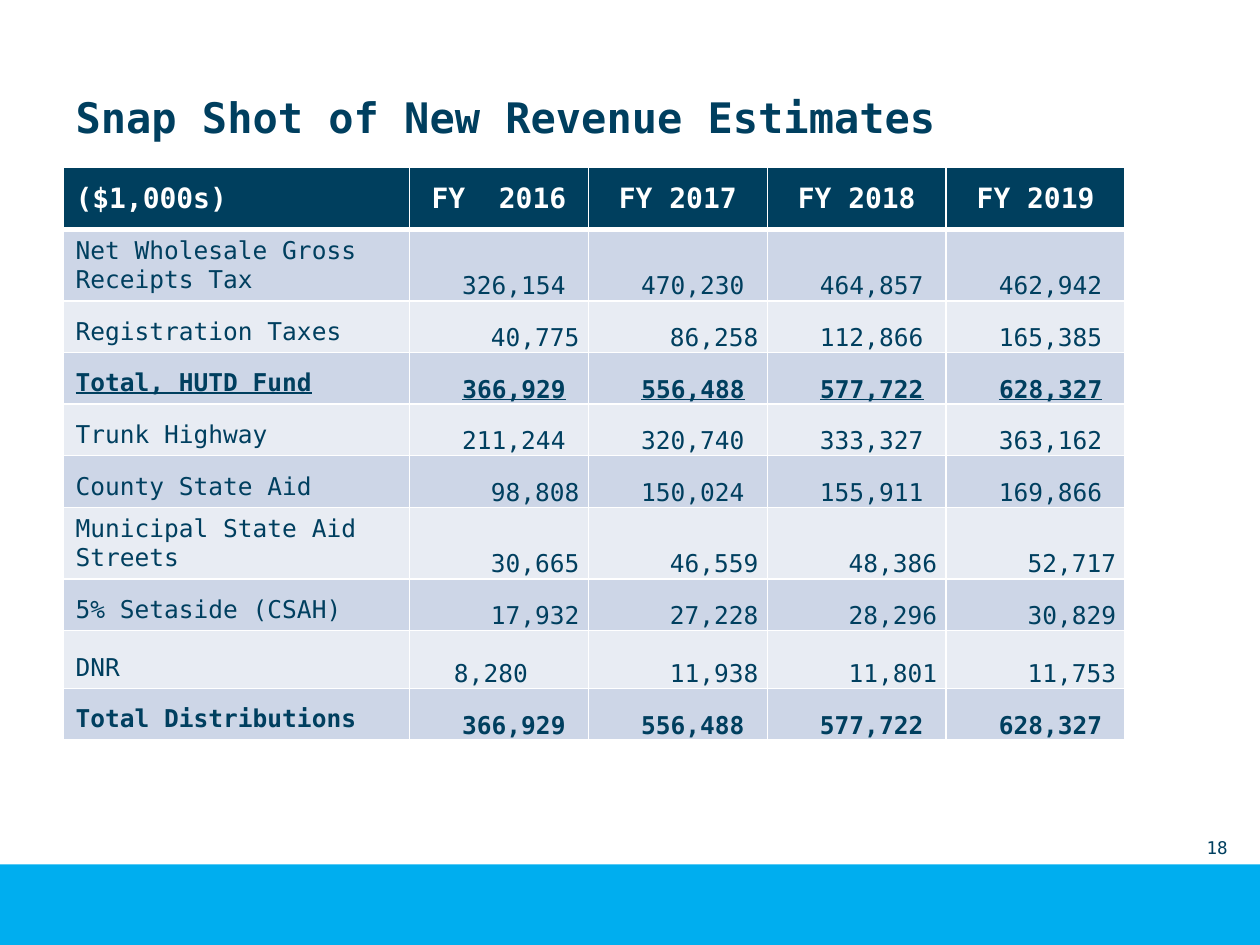
from dataclasses import dataclass

from lxml.etree import SubElement
from pptx import Presentation
from pptx.dml.color import RGBColor
from pptx.enum.shapes import MSO_SHAPE
from pptx.enum.text import MSO_ANCHOR as Anchor, PP_ALIGN as Align
from pptx.oxml.ns import qn
from pptx.util import Inches, Pt


@dataclass(frozen=True)
class Theme:
    font: str = "DejaVu Sans Mono"
    ink: str = "003F5F"
    header: str = "003F5E"
    white: str = "FFFFFF"
    bands: tuple = ("CDD6E7", "E8ECF3")
    bar: str = "00AEEF"
    title_size: int = 24
    header_size: int = 16
    body_size: int = 14
    number_size: int = 10


THEME = Theme()
HEADINGS = ["($1,000s)", "FY  2016", "FY 2017", "FY 2018", "FY 2019"]
REVENUE = [
    ["Net Wholesale Gross Receipts Tax", "326,154", "470,230", "464,857", "462,942"],
    ["Registration Taxes", "40,775", "86,258", "112,866", "165,385"],
    ["Total, HUTD Fund", "366,929", "556,488", "577,722", "628,327"],
    ["Trunk Highway", "211,244", "320,740", "333,327", "363,162"],
    ["County State Aid", "98,808", "150,024", "155,911", "169,866"],
    ["Municipal State Aid Streets", "30,665", "46,559", "48,386", "52,717"],
    ["5% Setaside (CSAH)", "17,932", "27,228", "28,296", "30,829"],
    ["DNR", "8,280", "11,938", "11,801", "11,753"],
    ["Total Distributions", "366,929", "556,488", "577,722", "628,327"],
]
COLUMN_WIDTHS = [2.75] + [1.42] * 4
ROW_HEIGHTS = [0.49, 0.55, 0.41, 0.41, 0.41, 0.41, 0.55, 0.41, 0.46, 0.41]
RIGHT_MARGINS = {7: 0.18, 6: 0.07, 5: 0.48}
UNDERLINED_ROW = 3
UNDERLINE_TABS = (0.35, 1.29)


def style_text(paragraph, size, color=THEME.ink, bold=False, align=Align.LEFT):
    paragraph.alignment = align
    font = paragraph.font
    font.name = THEME.font
    font.size = Pt(size)
    font.bold = bold
    font.color.rgb = RGBColor.from_string(color)


def add_title(slide, text):
    title = slide.shapes.title
    title.left, title.top = Inches(0.5), Inches(0.3)
    title.width, title.height = Inches(9), Inches(1.25)
    title.text_frame.text = text
    title.text_frame.vertical_anchor = Anchor.MIDDLE
    style_text(title.text_frame.paragraphs[0], THEME.title_size, bold=True)


def add_footer_bar(slide):
    bar = slide.shapes.add_shape(
        MSO_SHAPE.RECTANGLE, 0, Inches(6.86), Inches(10), Inches(0.64))
    bar.shadow.inherit = False
    bar.fill.solid()
    bar.fill.fore_color.rgb = RGBColor.from_string(THEME.bar)
    bar.line.fill.background()


def add_page_number(slide, number):
    box = slide.shapes.add_textbox(
        Inches(9.46), Inches(6.46), Inches(0.4), Inches(0.4))
    frame = box.text_frame
    frame.word_wrap = True
    frame.vertical_anchor = Anchor.BOTTOM
    frame.text = number
    style_text(frame.paragraphs[0], THEME.number_size, align=Align.CENTER)


def set_borders(cell, top, bottom):
    properties = cell._tc.get_or_add_tcPr()
    widths = {"a:lnL": 1, "a:lnR": 1, "a:lnT": top, "a:lnB": bottom}
    for tag, width in widths.items():
        line = SubElement(properties, qn(tag), w=str(Pt(width)))
        fill = SubElement(line, qn("a:solidFill"))
        SubElement(fill, qn("a:srgbClr"), val=THEME.white)


def add_tabs(paragraph, positions):
    tabs = SubElement(paragraph._p.get_or_add_pPr(), qn("a:tabLst"))
    for position in positions:
        SubElement(tabs, qn("a:tab"), pos=str(Inches(position)), algn="l")


def format_header(cell, column):
    cell.vertical_anchor = Anchor.MIDDLE
    style_text(cell.text_frame.paragraphs[0], THEME.header_size, THEME.white,
               True, Align.CENTER if column else Align.LEFT)


def format_label(cell, bold, underline):
    paragraph = cell.text_frame.paragraphs[0]
    style_text(paragraph, THEME.body_size, bold=bold)
    paragraph.font.underline = underline


def format_value(cell, bold, underline):
    paragraph = cell.text_frame.paragraphs[0]
    cell.margin_top, cell.margin_bottom = Inches(0.01), 0
    cell.margin_left = Inches(0.07 if underline else 0.01)
    cell.margin_right = Inches(0.01 if underline else RIGHT_MARGINS[len(cell.text)])
    if underline:
        paragraph.text = f"\t{cell.text}\t"
        add_tabs(paragraph, UNDERLINE_TABS)
    style_text(paragraph, THEME.body_size, bold=bold,
               align=Align.LEFT if underline else Align.RIGHT)
    paragraph.font.underline = underline


def format_cell(cell, row, column, label):
    if row == 0:
        color = THEME.header
        format_header(cell, column)
    else:
        color = THEME.bands[(row - 1) % 2]
        cell.vertical_anchor = Anchor.BOTTOM
        format_body = format_value if column else format_label
        format_body(cell, label.startswith("Total"), row == UNDERLINED_ROW)
    set_borders(cell, top=3 if row == 1 else 1, bottom=3 if row == 0 else 1)
    cell.fill.solid()
    cell.fill.fore_color.rgb = RGBColor.from_string(color)


def add_revenue_table(slide):
    rows = [HEADINGS] + REVENUE
    table = slide.shapes.add_table(
        len(rows), len(HEADINGS), Inches(0.5), Inches(1.33),
        Inches(sum(COLUMN_WIDTHS)), Inches(sum(ROW_HEIGHTS))).table
    for column, width in zip(table.columns, COLUMN_WIDTHS):
        column.width = Inches(width)
    for row, height in zip(table.rows, ROW_HEIGHTS):
        row.height = Inches(height)
    for row, values in enumerate(rows):
        for column, value in enumerate(values):
            cell = table.cell(row, column)
            cell.text = value
            format_cell(cell, row, column, values[0])


def main():
    presentation = Presentation()
    presentation.slide_width, presentation.slide_height = Inches(10), Inches(7.5)
    slide = presentation.slides.add_slide(presentation.slide_layouts[5])
    add_footer_bar(slide)
    add_page_number(slide, "18")
    add_title(slide, "Snap Shot of New Revenue Estimates")
    add_revenue_table(slide)
    presentation.save("out.pptx")


if __name__ == "__main__":
    main()
